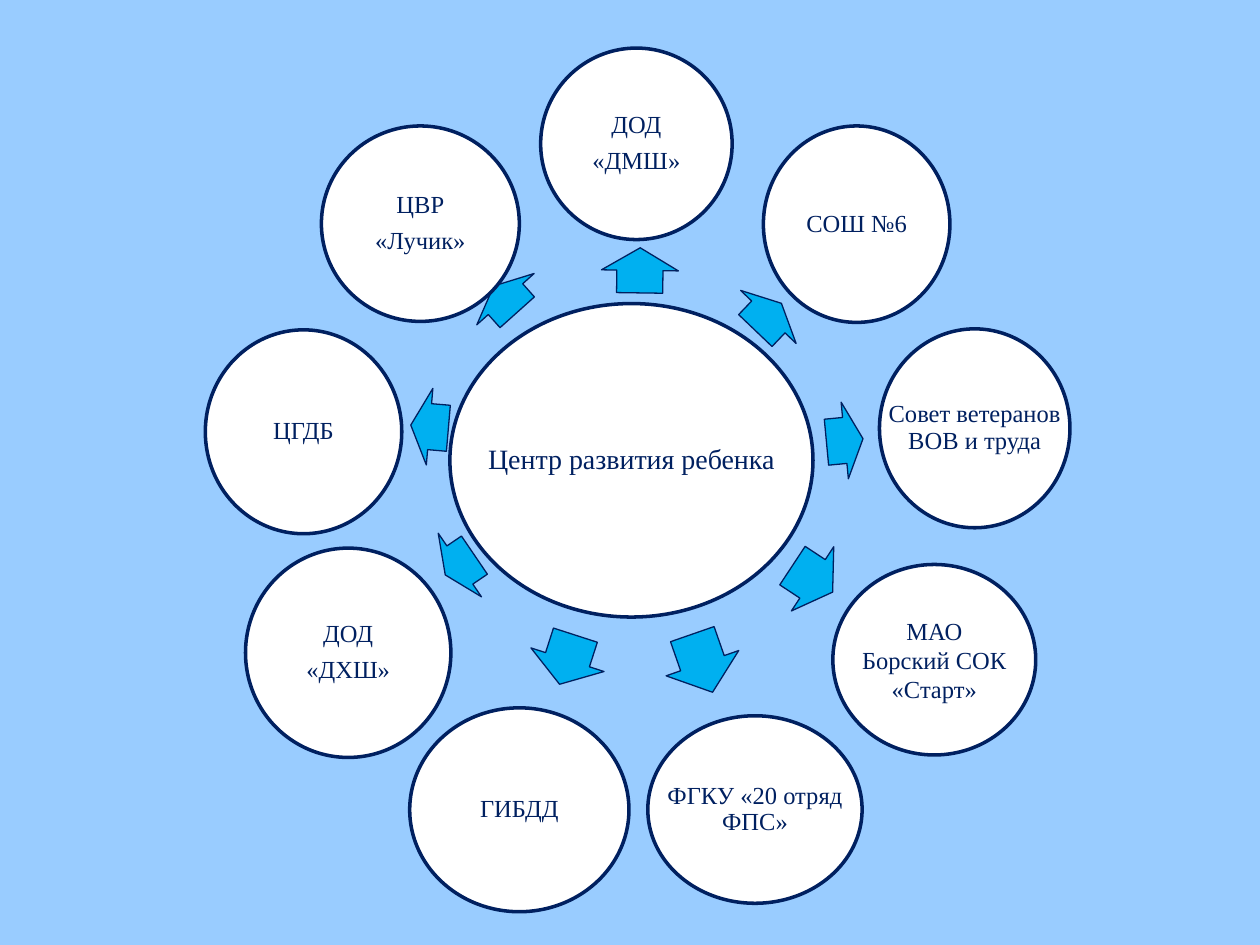
from pptx import Presentation
from pptx import util as u
from pptx.dml.color import RGBColor
from pptx.enum import shapes, text

COLORS = {"sky": "99CCFF", "white": "FFFFFF", "navy": "002060", "blue": "00B0F0"}
FONT = "Times New Roman"
ARROW_HEIGHT = 1.55
SPACED = {"line_spacing": 0.9, "space_after": u.Pt(5.6)}
TIGHT = {"line_spacing": 1.0, "space_after": u.Pt(0)}

# Content: lines, circle (left, top, width, height) in cm
CENTER = (["Центр развития ребенка"], (9.07, 6.12, 7.32, 6.32))

# Partners clockwise from the top: lines, circle, paragraph format,
# arrow (centre x, centre y, length, rotation)
PARTNERS = [
    (["ДОД", "«ДМШ»"], (10.9, 0.97, 3.86, 3.86), SPACED, (12.9, 5.45, 0.91, 270.8)),
    (["СОШ №6"], (15.39, 2.54, 3.76, 3.96), SPACED, (15.49, 6.39, 0.76, 313.7)),
    (["Совет ветеранов ВОВ и труда"], (17.73, 6.63, 3.84, 4.01), SPACED,
     (17.03, 8.88, 0.74, 354.6)),
    (["МАО", "Борский СОК", "«Старт»"], (16.79, 11.38, 4.09, 3.84), TIGHT,
     (16.38, 11.67, 0.97, 33.4)),
    (["ФГКУ «20 отряд ФПС»"], (13.06, 14.43, 4.32, 3.78), SPACED,
     (14.16, 13.37, 1.24, 70.8)),
    (["ГИБДД"], (8.26, 14.27, 4.42, 4.11), SPACED, (11.44, 13.3, 1.04, 107.9)),
    (["ДОД", "«ДХШ»"], (4.95, 11.05, 4.14, 4.22), SPACED, (9.27, 11.39, 0.71, 145.8)),
    (["ЦГДБ"], (4.14, 6.65, 3.96, 4.11), SPACED, (8.66, 8.6, 0.76, 184.9)),
    (["ЦВР", "«Лучик»"], (6.48, 2.54, 3.99, 3.94), SPACED, (10.19, 6.03, 0.71, 228.2)),
]


def color(name):
    return RGBColor.from_string(COLORS[name])


def set_all(target, values):
    for name, value in values.items():
        setattr(target, name, value)


def add_figure(page, kind, place, fill, line_width):
    figure = page.shapes.add_shape(kind, *map(u.Cm, place))
    figure.shadow.inherit = False
    figure.fill.solid()
    figure.fill.fore_color.rgb = color(fill)
    figure.line.color.rgb = color("navy")
    figure.line.width = u.Pt(line_width)
    return figure


def add_circle(page, lines, place, size, para_format):
    add_figure(page, shapes.MSO_SHAPE.OVAL, place, "white", 2)
    # The label uses the full width of the circle
    frame = page.shapes.add_textbox(*map(u.Cm, place)).text_frame
    set_all(frame, {"word_wrap": True, "vertical_anchor": text.MSO_ANCHOR.MIDDLE})
    for side in ("left", "top", "right", "bottom"):
        setattr(frame, f"margin_{side}", u.Cm(0.05))
    for index, line in enumerate(lines):
        para = frame.add_paragraph() if index else frame.paragraphs[0]
        set_all(para, {"alignment": text.PP_ALIGN.CENTER, **para_format})
        span = para.add_run()
        span.text = line
        set_all(span.font, {"name": FONT, "size": u.Pt(size)})
        span.font.color.rgb = color("navy")


def add_arrow(page, x, y, length, rotation):
    place = (x - length / 2, y - ARROW_HEIGHT / 2, length, ARROW_HEIGHT)
    arrow = add_figure(page, shapes.MSO_SHAPE.RIGHT_ARROW, place, "blue", 0.75)
    arrow.rotation = rotation
    arrow.adjustments[0] = 0.6
    arrow.adjustments[1] = 0.5


# Page
deck = Presentation()
set_all(deck, {"slide_width": u.Cm(25.4), "slide_height": u.Cm(19.05)})
page = deck.slides.add_slide(deck.slide_layouts[6])
page.background.fill.solid()
page.background.fill.fore_color.rgb = color("sky")

# Hub and partners
add_circle(page, *CENTER, 16, SPACED)
for lines, place, para_format, arrow in PARTNERS:
    add_arrow(page, *arrow)
    add_circle(page, lines, place, 14, para_format)

deck.save("out.pptx")
